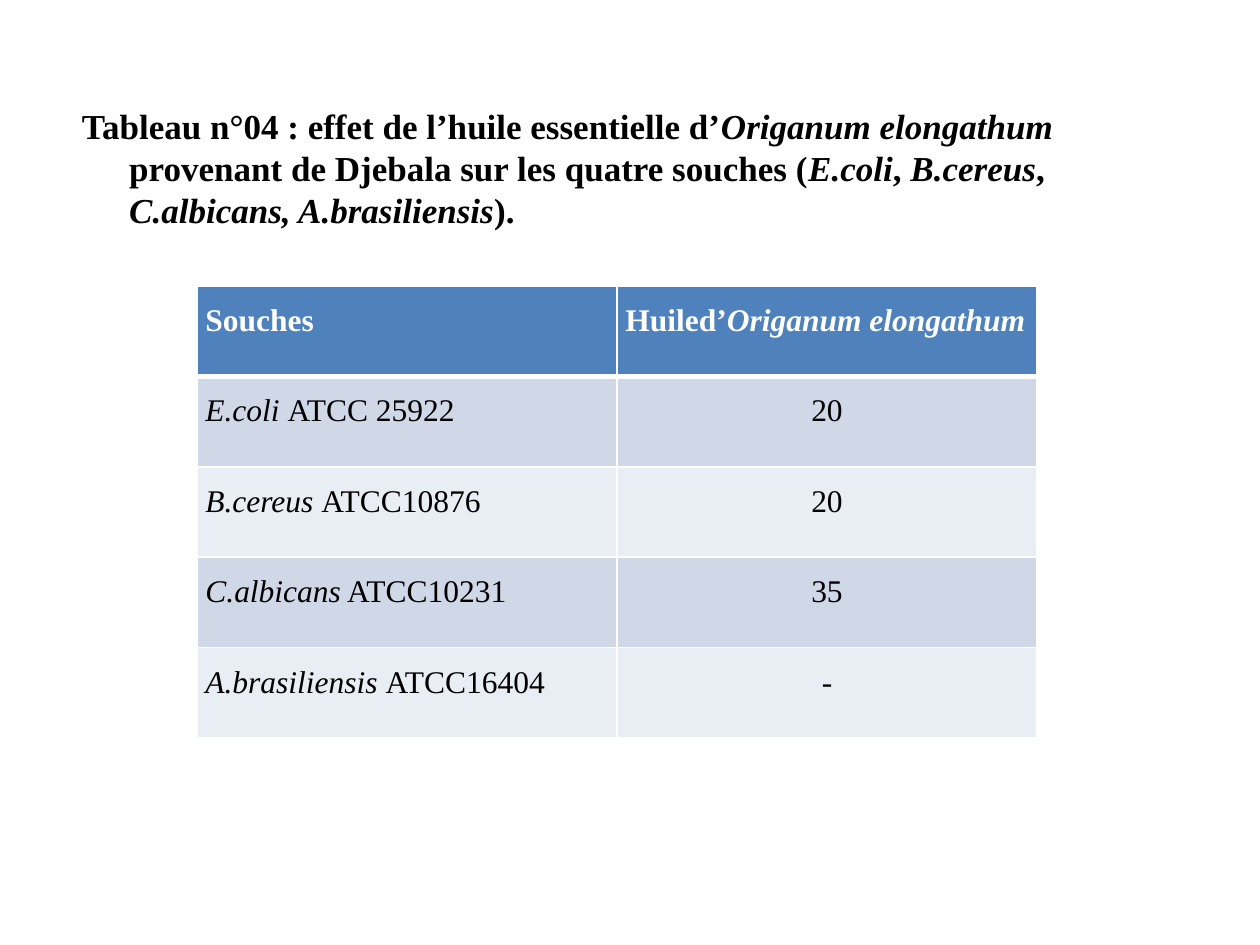
from lxml import etree
from pptx import Presentation
from pptx.dml.color import RGBColor
from pptx.enum.text import MSO_ANCHOR, MSO_AUTO_SIZE, PP_ALIGN
from pptx.oxml.ns import qn
from pptx.util import Pt

LEFT, CENTER = PP_ALIGN.LEFT, PP_ALIGN.CENTER
TOP = MSO_ANCHOR.TOP
NO_AUTOFIT = MSO_AUTO_SIZE.NONE

THEME = {
    "font": "Times New Roman",
    "caption_size": 20,
    "table_size": 18,
    "text": "000000",
    "header_text": "FFFFFF",
    "header_fill": "4F81BD",
    "bands": ("D0D8E8", "E9EDF4"),
    "border": "FFFFFF",
}


def add_runs(paragraph, pieces, size, color, bold):
    for text, italic in pieces:
        run = paragraph.add_run()
        run.text = text
        run.font.name = THEME["font"]
        run.font.size = Pt(size)
        run.font.color.rgb = RGBColor.from_string(color)
        run.font.bold = bold
        run.font.italic = italic


def set_borders(cell, bottom_width):
    properties = cell._tc.get_or_add_tcPr()
    sides = (("lnL", 1), ("lnR", 1), ("lnT", 1), ("lnB", bottom_width))
    for position, (side, width) in enumerate(sides):
        line = etree.Element(qn(f"a:{side}"), w=str(Pt(width)))
        fill = etree.SubElement(line, qn("a:solidFill"))
        etree.SubElement(fill, qn("a:srgbClr"), val=THEME["border"])
        properties.insert(position, line)


presentation = Presentation()
presentation.slide_width = Pt(720)
presentation.slide_height = Pt(540)
slide = presentation.slides.add_slide(presentation.slide_layouts[1])
title = slide.shapes.title
title.element.getparent().remove(title.element)

caption = slide.placeholders[1]
caption.left, caption.top, caption.width, caption.height = Pt(39.6), Pt(56), Pt(648), Pt(90)
caption.text_frame.auto_size = NO_AUTOFIT
caption.text_frame.vertical_anchor = TOP
paragraph = caption.text_frame.paragraphs[0]
paragraph_properties = paragraph._p.get_or_add_pPr()
paragraph_properties.set("marL", str(Pt(27)))
paragraph_properties.set("indent", str(Pt(-27)))
etree.SubElement(paragraph_properties, qn("a:buNone"))
paragraph.space_before = Pt(0)
paragraph.line_spacing = Pt(24)
caption_pieces = [
    ("Tableau\u00a0n°04 : effet de l’huile essentielle d’", False),
    ("Origanum elongathum ", True),
    ("provenant de Djebala sur les quatre souches (", False),
    ("E.coli", True),
    (", ", False),
    ("B.cereus", True),
    (", ", False),
    ("C.albicans, A.brasiliensis", True),
    (").", False),
]
add_runs(paragraph, caption_pieces, THEME["caption_size"], THEME["text"], True)

rows = [
    ([("Souches", False)], [("Huiled’", False), ("Origanum elongathum", True)]),
    ([("E.coli ", True), ("ATCC 25922", False)], [("20", False)]),
    ([("B.cereus ", True), ("ATCC10876", False)], [("20", False)]),
    ([("C.albicans", True), (" ATCC10231", False)], [("35", False)]),
    ([("A.brasiliensis ", True), ("ATCC16404", False)], [("-", False)]),
]
column_width, row_height = 240, 51.7
table = slide.shapes.add_table(
    len(rows), 2, Pt(112.6), Pt(163.4), Pt(2 * column_width), Pt(len(rows) * row_height)
).table
for column in table.columns:
    column.width = Pt(column_width)

for row_index, row in enumerate(rows):
    table.rows[row_index].height = Pt(row_height)
    is_header = row_index == 0
    fill = THEME["header_fill"] if is_header else THEME["bands"][(row_index - 1) % 2]
    color = THEME["header_text"] if is_header else THEME["text"]
    for column_index, pieces in enumerate(row):
        cell = table.cell(row_index, column_index)
        cell.margin_left = cell.margin_right = Pt(4.8)
        cell.margin_top = cell.margin_bottom = Pt(0)
        cell.vertical_anchor = TOP
        cell.fill.solid()
        cell.fill.fore_color.rgb = RGBColor.from_string(fill)
        set_borders(cell, 3 if is_header else 1)
        paragraph = cell.text_frame.paragraphs[0]
        paragraph.alignment = CENTER if column_index and not is_header else LEFT
        paragraph.line_spacing = 1.5
        add_runs(paragraph, pieces, THEME["table_size"], color, is_header)

presentation.save("out.pptx")
